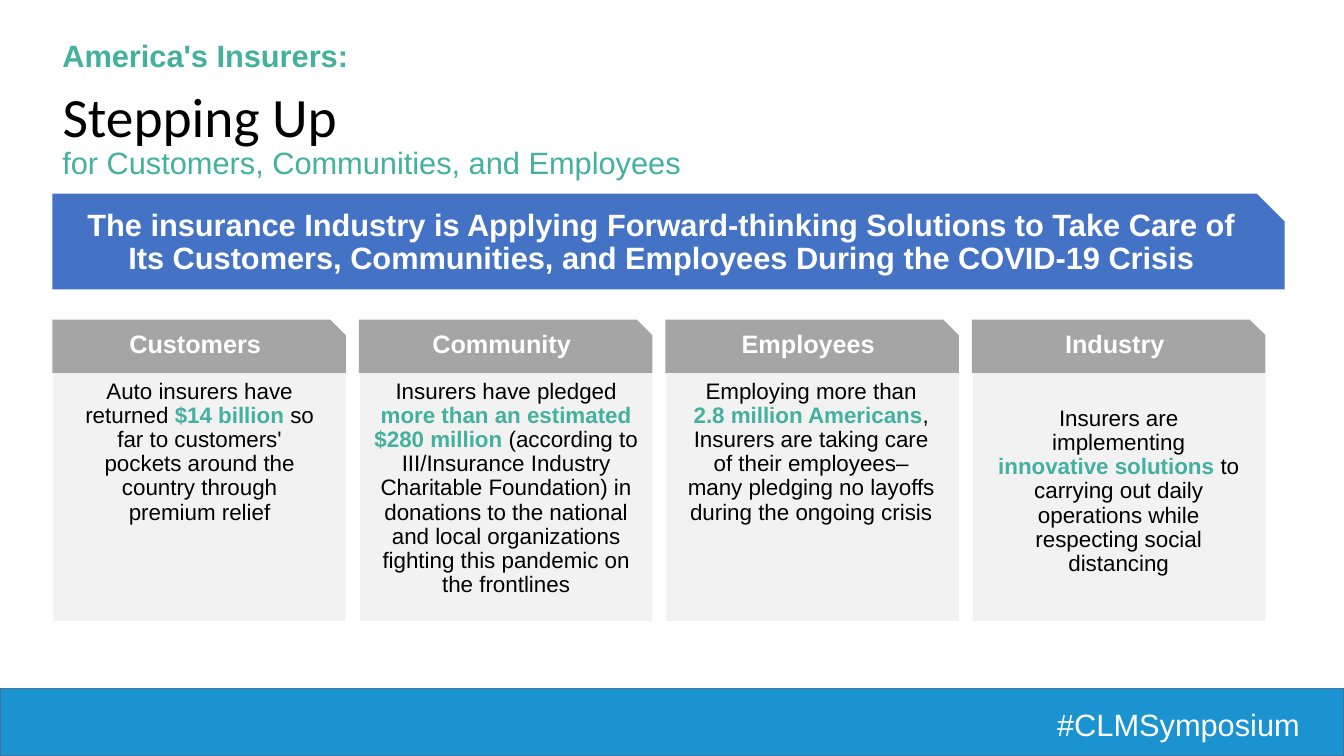
from pptx import Presentation
from pptx.dml.color import RGBColor
from pptx.enum.shapes import MSO_SHAPE as SHAPE
from pptx.enum.text import MSO_ANCHOR as ANCHOR, PP_ALIGN as ALIGN
from pptx.util import Inches, Pt

GREEN, WHITE, BLACK = "43B19E", "FFFFFF", "000000"

TITLE = "Stepping Up"
KICKER = "America's Insurers:"
SUBTITLE = "for Customers, Communities, and Employees"
BANNER = ("The insurance Industry is Applying Forward-thinking Solutions to Take Care of "
          "Its Customers, Communities, and Employees During the COVID-19 Crisis")
HASHTAG = "#CLMSymposium"

# Heading, (before, highlight, after), text box (left, top, width, height)
CARDS = [
    ("Customers",
     ("Auto insurers have returned ", "$14 billion ",
      "so far to customers' pockets around the country through premium relief"),
     (0.66, 3.72, 2.64, 1.56)),
    ("Community",
     ("Insurers have pledged ", "more than an estimated $280 million ",
      "(according to III/Insurance Industry Charitable Foundation) in donations to the "
      "national and local organizations fighting this pandemic on the frontlines"),
     (3.57, 3.72, 2.9, 2.34)),
    ("Employees",
     ("Employing more than ", "2.8 million Americans",
      ", Insurers are taking care of their employees–many pledging no layoffs "
      "during the ongoing crisis"),
     (6.72, 3.72, 2.65, 1.86)),
    ("Industry",
     ("Insurers are implementing ", "innovative solutions ",
      "to carrying out daily operations while respecting social distancing"),
     (9.8, 3.99, 2.59, 1.86)),
]
CARD_LEFT, CARD_PITCH = 0.52, 3.04


def color(value):
    return RGBColor.from_string(value)


def write(shape, runs, align=ALIGN.LEFT, spacing=1.0):
    """Fill the first paragraph with (text, size, color, bold) runs."""
    shape.text_frame.word_wrap = True
    paragraph = shape.text_frame.paragraphs[0]
    paragraph.alignment = align
    paragraph.line_spacing = spacing
    for text, size, hex_color, bold in runs:
        run = paragraph.add_run()
        run.text = text
        for name, value in {"name": "Arial", "size": Pt(size), "bold": bold}.items():
            setattr(run.font, name, value)
        run.font.color.rgb = color(hex_color)


def add_block(kind, box, fill, line=None):
    shape = slide.shapes.add_shape(kind, *map(Inches, box))
    shape.shadow.inherit = False
    shape.fill.solid()
    shape.fill.fore_color.rgb = color(fill)
    if line:
        shape.line.color.rgb = color(line)
        shape.line.width = Pt(1)
    else:
        shape.line.fill.background()
    return shape


def add_snipped(box, fill, text, size):
    shape = add_block(SHAPE.SNIP_1_RECTANGLE, box, fill)
    shape.adjustments[0] = 0.292
    frame = shape.text_frame
    frame.vertical_anchor = ANCHOR.MIDDLE
    margins = {"left": 0.2, "top": 0.1, "right": 0.2, "bottom": 0.2}
    for side, inset in margins.items():
        setattr(frame, f"margin_{side}", Inches(inset))
    write(shape, [(text, size, WHITE, True)], ALIGN.CENTER, 0.9)


def add_text(box, runs, align=ALIGN.LEFT, spacing=1.0):
    write(slide.shapes.add_textbox(*map(Inches, box)), runs, align, spacing)


presentation = Presentation()
presentation.slide_width = Inches(13.33)
presentation.slide_height = Inches(7.5)
slide = presentation.slides.add_slide(presentation.slide_layouts[5])

# Footer band
add_block(SHAPE.RECTANGLE, (0, 6.83, 13.33, 0.67), "1C93D1", "43739E")
add_text((9.91, 6.95, 3.08, 0.47), [(HASHTAG, 22, WHITE, False)], ALIGN.RIGHT)

# Title with the lines above and below it
title = slide.shapes.title
title.left, title.top, title.width, title.height = map(Inches, (0.52, 0.25, 12.33, 1.23))
title.text_frame.vertical_anchor = ANCHOR.BOTTOM
title.text_frame.margin_bottom = 0
write(title, [(TITLE, 39.6, BLACK, False)], spacing=0.9)
title.text_frame.paragraphs[0].runs[0].font.name = "Calibri"
add_text((0.52, 0.32, 4.84, 0.47), [(KICKER, 22, GREEN, True)])
add_text((0.52, 1.38, 8.76, 0.47), [(SUBTITLE, 22, GREEN, False)])

# Banner
add_snipped((0.52, 1.92, 12.22, 0.95), "4472C4", BANNER, 22)

# Cards
for index, (heading, (before, highlight, after), text_box) in enumerate(CARDS):
    left = CARD_LEFT + index * CARD_PITCH
    add_block(SHAPE.RECTANGLE, (left + 0.01, 3.7, 2.9, 2.46), "F2F2F2")
    add_snipped((left, 3.17, 2.91, 0.53), "A5A5A5", heading, 18)
    add_text(text_box, [(before, 16, BLACK, False), (highlight, 16, GREEN, True),
                        (after, 16, BLACK, False)], ALIGN.CENTER, 0.9)

presentation.save("out.pptx")
